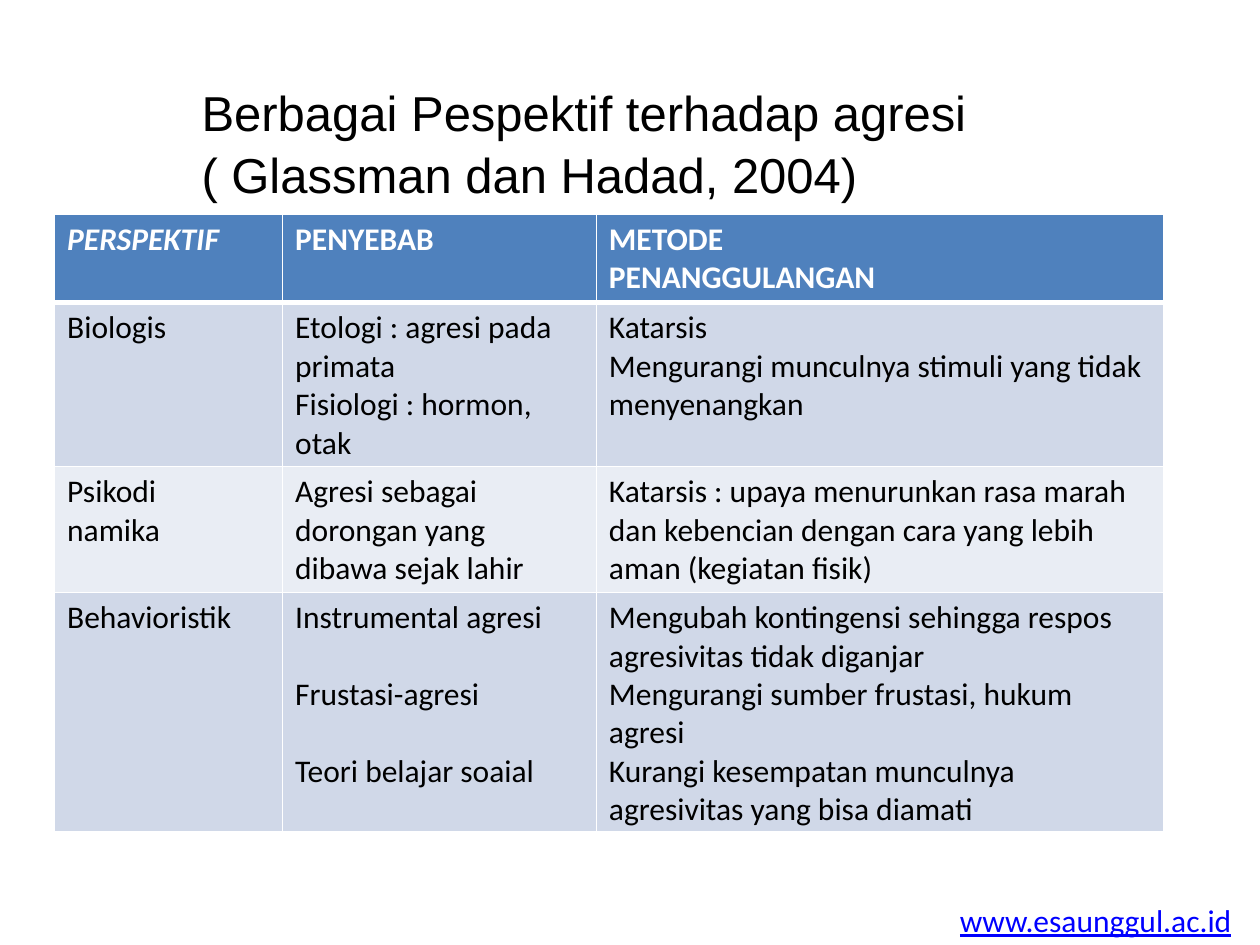
"""Build a slide with a table of perspectives on aggression."""
from lxml.etree import SubElement
from pptx import Presentation
from pptx.dml.color import RGBColor
from pptx.enum.text import MSO_ANCHOR, PP_ALIGN
from pptx.oxml.ns import qn
from pptx.util import Pt

BLACK = RGBColor(0x00, 0x00, 0x00)
WHITE = RGBColor(0xFF, 0xFF, 0xFF)
LINK = RGBColor(0x00, 0x00, 0xFF)
HEAD = RGBColor(0x4F, 0x81, 0xBD)
BANDS = (RGBColor(0xE9, 0xED, 0xF4), RGBColor(0xD0, 0xD8, 0xE8))

TITLE = ["Berbagai Pespektif terhadap agresi", "( Glassman dan Hadad, 2004)"]
SITE = ["www.esaunggul.ac.id"]
ROWS = [
    (["PERSPEKTIF"], ["PENYEBAB"], ["METODE", "PENANGGULANGAN"]),
    (["Biologis"],
     ["Etologi : agresi pada primata", "Fisiologi : hormon, otak"],
     ["Katarsis", "Mengurangi munculnya stimuli yang tidak menyenangkan"]),
    (["Psikodi", "namika"],
     ["Agresi sebagai dorongan yang dibawa sejak lahir"],
     ["Katarsis : upaya menurunkan rasa marah dan kebencian "
      "dengan cara yang lebih aman (kegiatan fisik)"]),
    (["Behavioristik"],
     ["Instrumental agresi", "Frustasi-agresi", "Teori belajar soaial"],
     ["Mengubah kontingensi sehingga respos agresivitas tidak diganjar",
      "Mengurangi sumber frustasi, hukum agresi",
      "Kurangi kesempatan munculnya agresivitas yang bisa diamati"]),
]
COL_WIDTHS = (130.3, 179.3, 324)
ROW_HEIGHTS = (50.4, 93.6, 72, 136.8)
GAPS = {(3, 1): 22}

TITLE_FONT = {"name": "Arial", "size": Pt(28), "bold": False}
BODY_FONT = {"name": "Calibri", "size": Pt(18), "bold": False}
HEAD_FONT = BODY_FONT | {"bold": True}


def write(tf, lines, font, color, gap=0, spacing=1.0):
    tf.text = "\n".join(lines)
    for i, p in enumerate(tf.paragraphs):
        p.alignment = PP_ALIGN.LEFT
        p.line_spacing = spacing
        p.space_before = Pt(gap if i else 0)
        for r in p.runs:
            for name, value in font.items():
                setattr(r.font, name, value)
            r.font.color.rgb = color


def add_borders(cell, bottom, top):
    tc_pr = cell._tc.get_or_add_tcPr()
    for side, width in (("L", 1), ("R", 1), ("T", top), ("B", bottom)):
        ln = SubElement(tc_pr, qn(f"a:ln{side}"), w=str(Pt(width)))
        SubElement(SubElement(ln, qn("a:solidFill")), qn("a:srgbClr"), val=str(WHITE))


prs = Presentation()
prs.slide_width, prs.slide_height = Pt(720), Pt(540)
s = prs.slides.add_slide(prs.slide_layouts[5])

title = s.shapes.title
title.left, title.top, title.width, title.height = Pt(108), Pt(41.8), Pt(534.2), Pt(74.9)
title.text_frame.vertical_anchor = MSO_ANCHOR.TOP
write(title.text_frame, TITLE, TITLE_FONT, BLACK, spacing=1.05)

site = s.shapes.add_textbox(Pt(541.4), Pt(511.2), Pt(171.4), Pt(28.8))
site.text_frame.word_wrap = False
write(site.text_frame, SITE, BODY_FONT | {"underline": True}, LINK)

table = s.shapes.add_table(len(ROWS), len(COL_WIDTHS), Pt(31.2), Pt(122.4),
                           Pt(sum(COL_WIDTHS)), Pt(sum(ROW_HEIGHTS))).table
for col, width in zip(table.columns, COL_WIDTHS):
    col.width = Pt(width)
for i, (row, height) in enumerate(zip(ROWS, ROW_HEIGHTS)):
    table.rows[i].height = Pt(height)
    for j, lines in enumerate(row):
        cell = table.cell(i, j)
        add_borders(cell, 1 if i else 3, 3 if i == 1 else 1)
        cell.fill.solid()
        cell.fill.fore_color.rgb = BANDS[i % 2] if i else HEAD
        font = BODY_FONT if i else HEAD_FONT | {"italic": j == 0}
        write(cell.text_frame, lines, font, BLACK if i else WHITE, GAPS.get((i, j), 0))

prs.save("out.pptx")
